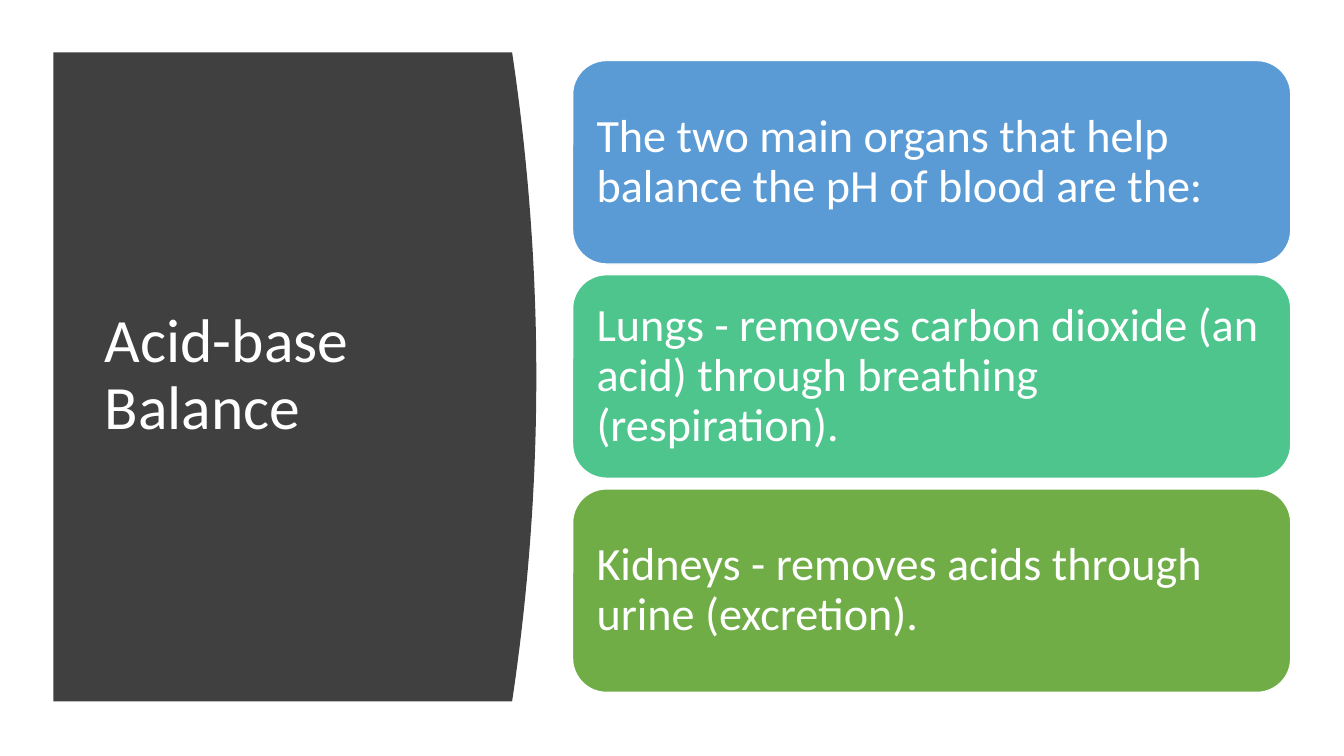
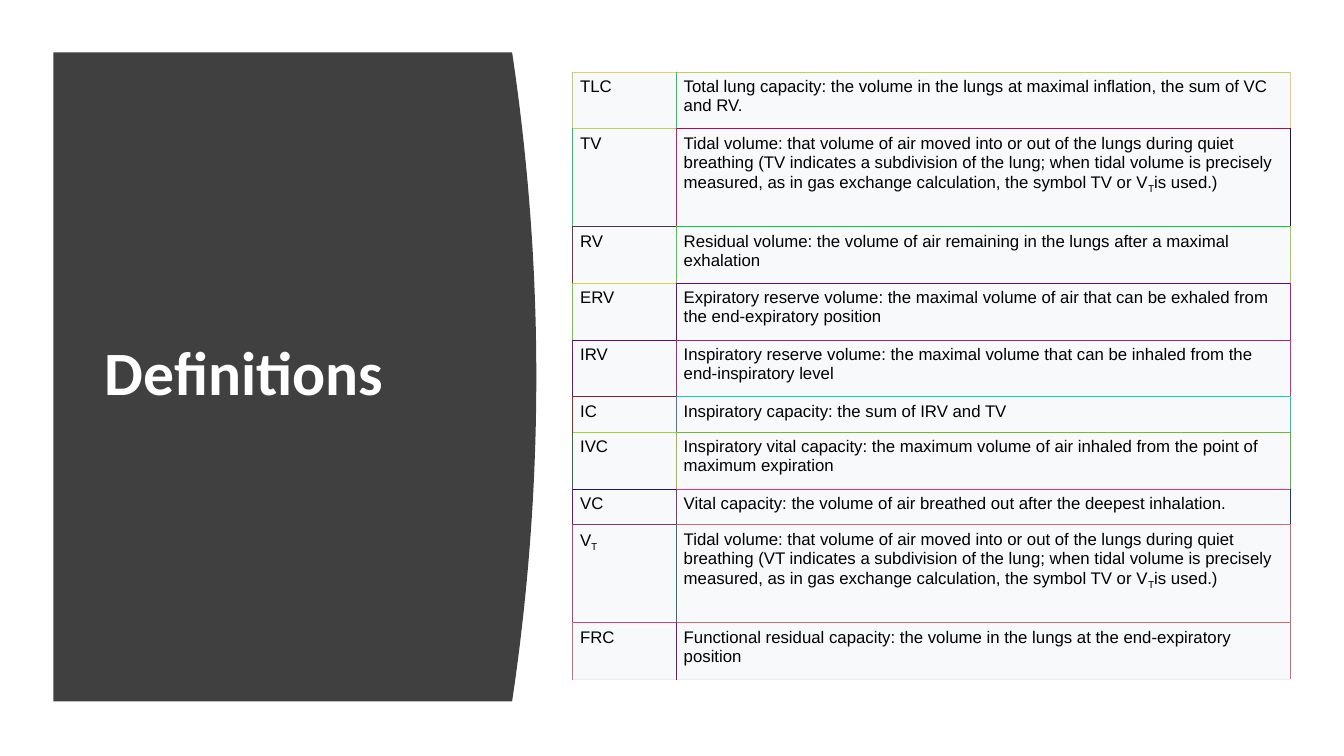
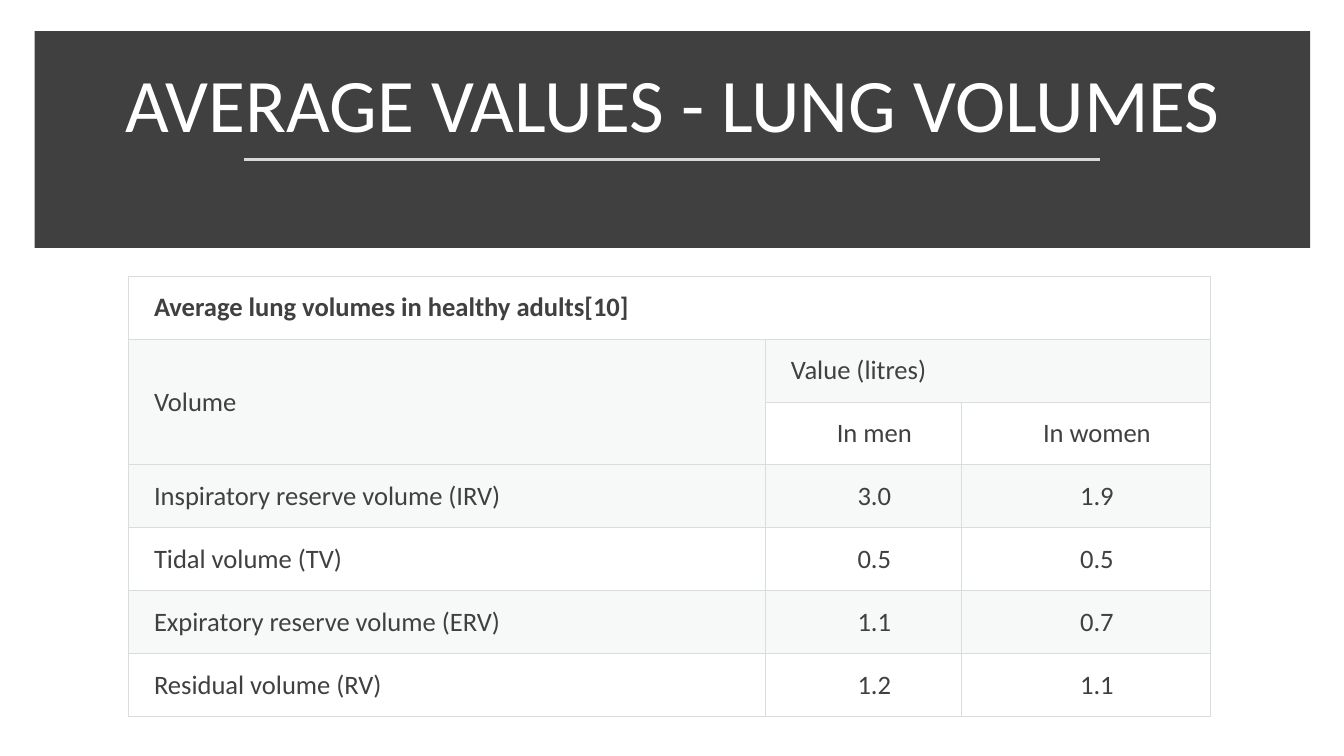
"""Builds three slides on acid-base balance, lung volume definitions and average values."""
from lxml.etree import SubElement
from pptx import Presentation
from pptx.dml.color import RGBColor
from pptx.enum.shapes import MSO_CONNECTOR as Connector, MSO_SHAPE as Shape
from pptx.enum.text import MSO_ANCHOR as Anchor, MSO_AUTO_SIZE as AutoSize, PP_ALIGN as Align
from pptx.oxml.ns import qn
from pptx.util import Pt

COLORS = {
    "dark": "404040", "white": "FFFFFF", "black": "000000", "rule": "D9D9D9",
    "blue": "5B9BD5", "teal": "4DC58D", "green": "70AD47",
    "cell": "F8F9FA", "band": "F7F8F8", "grid": "D8DEDC",
}
FONT = "Calibri"

CARDS = [
    ("The two main organs that help balance the pH of blood are the:", "blue"),
    ("Lungs - removes carbon dioxide (an acid) through breathing (respiration).", "teal"),
    ("Kidneys - removes acids through urine (excretion).", "green"),
]

TIDAL = ("Tidal volume: that volume of air moved into or out of the lungs during quiet breathing "
         "({} indicates a subdivision of the lung; when tidal volume is precisely measured, "
         "as in gas exchange calculation, the symbol TV or V~T~is used.)")
DEFINITIONS = [
    ("TLC", "Total lung capacity: the volume in the lungs at maximal inflation, the sum of VC and RV."),
    ("TV", TIDAL.format("TV")),
    ("RV", "Residual volume: the volume of air remaining in the lungs after a maximal exhalation"),
    ("ERV", "Expiratory reserve volume: the maximal volume of air that can be exhaled from "
            "the end-expiratory position"),
    ("IRV", "Inspiratory reserve volume: the maximal volume that can be inhaled from "
            "the end-inspiratory level"),
    ("IC", "Inspiratory capacity: the sum of IRV and TV"),
    ("IVC", "Inspiratory vital capacity: the maximum volume of air inhaled from the point of "
            "maximum expiration"),
    ("VC", "Vital capacity: the volume of air breathed out after the deepest inhalation."),
    ("V~T~", TIDAL.format("VT")),
    ("FRC", "Functional residual capacity: the volume in the lungs at the end-expiratory position"),
]
SHORT, MEDIUM, TALL = 25.5, 40.5, 70
DEFINITION_HEIGHTS = [MEDIUM, TALL, MEDIUM, MEDIUM, MEDIUM, SHORT, MEDIUM, SHORT, TALL, MEDIUM]
DEFINITION_VERTICALS = [
    ("C0CE63", "10D063", "F8CC63"), ("10D063", "E80C56", "200E56"),
    ("703056", "38D439", "A0D239"), ("70D239", "680B90", "D00C90"),
    ("781090", "B02274", "F02174"), ("B0242B", "5070B8", "08D3B8"),
    ("306B42", "A0BB35", "40BB35"), ("781090", "783974", "203A74"),
    ("C03C74", "386A74", "D86974"), ("D86974", "801374", "D86974"),
]
DEFINITION_HORIZONTALS = [
    ("E8CD63", "C0CE63"), ("C0CE63", "B80956"), ("503256", "00D339"), ("E0D439", "580C90"),
    ("580C90", "A82174"), ("80242B", "10CEB8"), ("A0D239", "70BB35"), ("280C90", "E83874"),
    ("783974", "D06B74"), ("D83F74", "D06B74"), ("EAECF0", "EAECF0"),
]

VOLUMES = [
    ("Average lung volumes in healthy adults[10]", "", ""),
    ("Volume", "Value (litres)", ""),
    ("", "In men", "In women"),
    ("Inspiratory reserve volume (IRV)", "3.0", "1.9"),
    ("Tidal volume (TV)", "0.5", "0.5"),
    ("Expiratory reserve volume (ERV)", "1.1", "0.7"),
    ("Residual volume (RV)", "1.2", "1.1"),
]
VOLUME_MERGES = [((0, 0), (0, 2)), ((1, 0), (2, 0)), ((1, 1), (1, 2))]


def color(name):
    return RGBColor.from_string(COLORS[name])


def fill_plain(shape, name):
    shape.shadow.inherit = False
    shape.fill.solid()
    shape.fill.fore_color.rgb = color(name)
    shape.line.fill.background()


def style(paragraph, size, name, font=FONT, bold=False, align=Align.LEFT):
    paragraph.alignment = align
    paragraph.font.name = font
    paragraph.font.size = Pt(size)
    paragraph.font.bold = bold
    paragraph.font.color.rgb = color(name)


def add_titled_slide(presentation, text, box, size=44, bold=False, align=Align.LEFT, anchor=Anchor.MIDDLE):
    slide = presentation.slides.add_slide(presentation.slide_layouts[5])
    title = slide.shapes.title
    title.left, title.top, title.width, title.height = map(Pt, box)
    frame = title.text_frame
    frame.text = text
    frame.word_wrap = True
    frame.auto_size = AutoSize.NONE
    frame.vertical_anchor = anchor
    paragraph = frame.paragraphs[0]
    paragraph.line_spacing = 0.9
    style(paragraph, size, "white", bold=bold, align=align)
    return slide


def send_to_back(slide, shape):
    slide.shapes._spTree.insert(2, shape._element)


def add_panel_slide(presentation, text, bold=False):
    slide = add_titled_slide(presentation, text, (67.7, 80, 269, 377), bold=bold)
    left, top, height, edge, bulge, steps = 38.2, 37.4, 463.7, 365.8, 17.3, 48
    curve = []
    for step in range(steps + 1):
        ratio = step / steps
        x = edge + bulge * 4 * ratio * (1 - ratio)
        curve.append((Pt(x), Pt(top + height * ratio)))
    builder = slide.shapes.build_freeform(Pt(left), Pt(top))
    builder.add_line_segments(curve + [(Pt(left), Pt(top + height))], close=True)
    panel = builder.convert_to_shape()
    fill_plain(panel, "dark")
    send_to_back(slide, panel)
    return slide


def set_borders(cell, sides):
    properties = cell._tc.get_or_add_tcPr()
    for index, (tag, value) in enumerate(zip(("a:lnL", "a:lnR", "a:lnT", "a:lnB"), sides)):
        line = SubElement(properties, qn(tag), w=str(Pt(0.75)))
        SubElement(SubElement(line, qn("a:solidFill")), qn("a:srgbClr"), val=value)
        properties.insert(index, line)


def write_text(paragraph, text):
    for index, part in enumerate(text.split("~")):
        if part:
            run = paragraph.add_run()
            run.text = part
            if index % 2:
                run.font.name = "Lato"
                run.font._element.set("baseline", "-25000")


def add_grid(slide, rows, corner, widths, heights, fills, margins, verticals, horizontals):
    frame = slide.shapes.add_table(len(rows), len(widths), *map(Pt, corner),
                                   Pt(sum(widths)), Pt(sum(heights)))
    table = frame.table
    table.first_row = table.horz_banding = False
    for column, width in zip(table.columns, widths):
        column.width = Pt(width)
    for r, texts in enumerate(rows):
        table.rows[r].height = Pt(heights[r])
        for c, text in enumerate(texts):
            cell = table.cell(r, c)
            (cell.margin_left, cell.margin_top,
             cell.margin_right, cell.margin_bottom) = map(Pt, margins)
            cell.fill.solid()
            cell.fill.fore_color.rgb = color(fills[r])
            set_borders(cell, (verticals[r][c], verticals[r][c + 1],
                               horizontals[r][c], horizontals[r + 1][c]))
            write_text(cell.text_frame.paragraphs[0], text)
    return table


def build_balance(presentation):
    slide = add_panel_slide(presentation, "Acid-base Balance")
    for index, (text, name) in enumerate(CARDS):
        card = slide.shapes.add_shape(Shape.ROUNDED_RECTANGLE, Pt(409), Pt(43.2 + 153 * index),
                                      Pt(513), Pt(145.4))
        fill_plain(card, name)
        card.line.color.rgb = color("white")
        card.line.width = Pt(1)
        frame = card.text_frame
        frame.word_wrap = True
        frame.vertical_anchor = Anchor.MIDDLE
        frame.margin_left = frame.margin_right = frame.margin_top = frame.margin_bottom = Pt(10)
        frame.text = text
        paragraph = frame.paragraphs[0]
        paragraph.line_spacing = 0.9
        style(paragraph, 33, "white")


def build_definitions(presentation):
    slide = add_panel_slide(presentation, "Definitions", bold=True)
    table = add_grid(slide, DEFINITIONS, (409, 51.6), (74, 439), DEFINITION_HEIGHTS,
                     ["cell"] * len(DEFINITIONS), (5.4, 3.6, 5.4, 3.6),
                     DEFINITION_VERTICALS, DEFINITION_HORIZONTALS)
    for cell in table.iter_cells():
        style(cell.text_frame.paragraphs[0], 12, "black", font="Arial")


def build_volumes(presentation):
    slide = add_titled_slide(presentation, "AVERAGE VALUES - LUNG VOLUMES", (42, 36.7, 877, 73.4),
                             size=54, align=Align.CENTER, anchor=Anchor.BOTTOM)
    band = slide.shapes.add_shape(Shape.RECTANGLE, Pt(24.8), Pt(22.2), Pt(911), Pt(155))
    fill_plain(band, "dark")
    send_to_back(slide, band)
    rule = slide.shapes.add_connector(Connector.STRAIGHT, Pt(174), Pt(113.8), Pt(786), Pt(113.8))
    rule.line.color.rgb = color("rule")
    rule.line.width = Pt(1.75)
    SubElement(rule._element.spPr, qn("a:effectLst"))

    count = len(VOLUMES)
    fills = ["band" if row % 2 else "white" for row in range(count)]
    lines = [[COLORS["grid"]] * 4] * (count + 1)
    table = add_grid(slide, VOLUMES, (92, 197.3), (455, 140, 178), [44.95] * count, fills,
                     (18, 9, 3, 9), lines, lines)
    for row in range(count):
        for column in range(3):
            cell = table.cell(row, column)
            cell.vertical_anchor = Anchor.MIDDLE
            align = Align.CENTER if row > 1 and column else Align.LEFT
            style(cell.text_frame.paragraphs[0], 19, "dark", bold=row == 0, align=align)
    for first, last in VOLUME_MERGES:
        table.cell(*first).merge(table.cell(*last))


def main():
    presentation = Presentation()
    presentation.slide_width, presentation.slide_height = Pt(960), Pt(540)
    build_balance(presentation)
    build_definitions(presentation)
    build_volumes(presentation)
    presentation.save("out.pptx")


if __name__ == "__main__":
    main()
